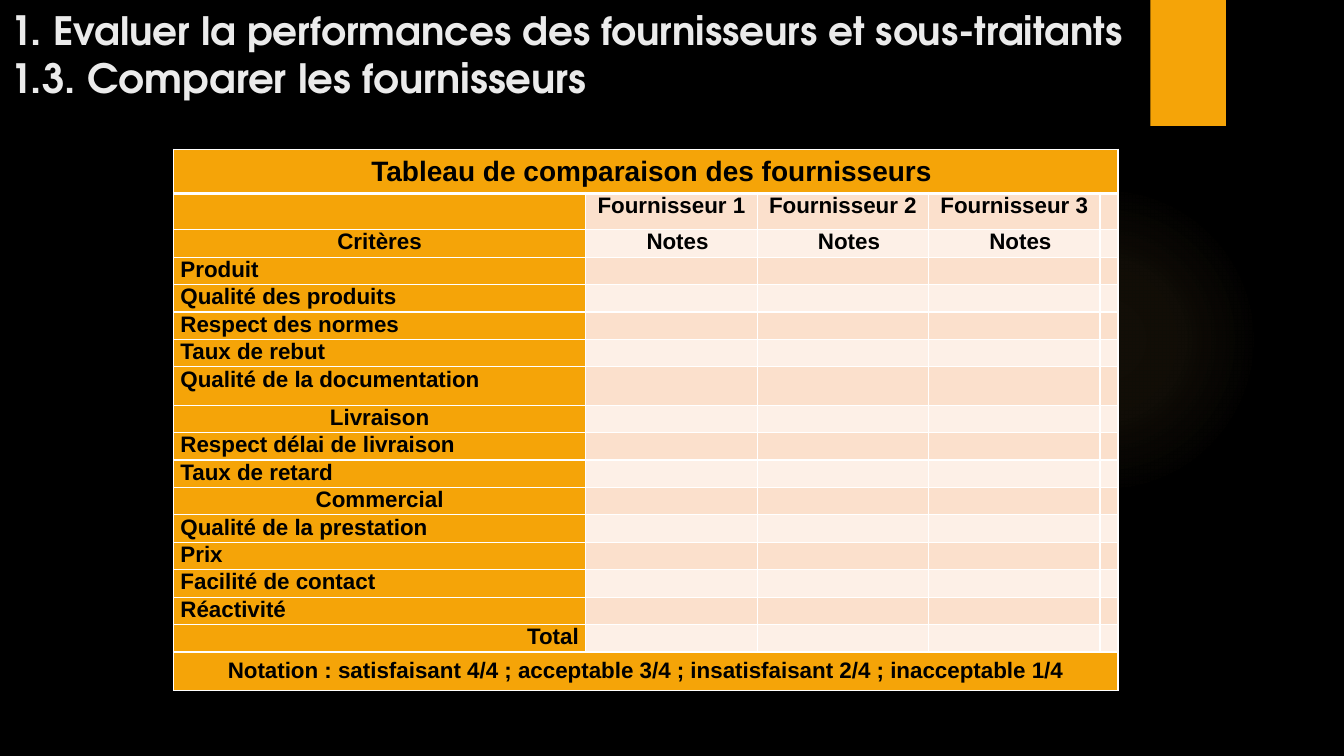
from lxml import etree
from pptx import Presentation
from pptx.dml.color import RGBColor
from pptx.enum.shapes import MSO_SHAPE
from pptx.enum.text import MSO_ANCHOR, MSO_AUTO_SIZE, PP_ALIGN
from pptx.oxml import parse_xml
from pptx.oxml.ns import qn
from pptx.util import Inches, Pt

LEFT, MID, RIGHT = PP_ALIGN.LEFT, PP_ALIGN.CENTER, PP_ALIGN.RIGHT
TOP, CENTER, BOTTOM = MSO_ANCHOR.TOP, MSO_ANCHOR.MIDDLE, MSO_ANCHOR.BOTTOM
NS = "http://schemas.openxmlformats.org/drawingml/2006/main"

TITLE = [
    [("1. ", 28.8), ("Evaluer la performances des fournisseurs et sous-traitants", 27.9)],
    [("1.3. Comparer les fournisseurs", 28.8)],
]
HEAD = "Tableau de comparaison des fournisseurs"
NOTE = "Notation : satisfaisant 4/4 ; acceptable 3/4 ; insatisfaisant 2/4 ; inacceptable 1/4"
ROWS = [
    ("", LEFT, ["Fournisseur 1", "Fournisseur 2", "Fournisseur 3"]),
    ("Critères", MID, ["Notes"] * 3),
    ("Produit", LEFT, []),
    ("Qualité des produits", LEFT, []),
    ("Respect des normes", LEFT, []),
    ("Taux de rebut", LEFT, []),
    ("Qualité de la documentation", LEFT, []),
    ("Livraison", MID, []),
    ("Respect délai de livraison", LEFT, []),
    ("Taux de retard", LEFT, []),
    ("Commercial", MID, []),
    ("Qualité de la prestation", LEFT, []),
    ("Prix", LEFT, []),
    ("Facilité de contact", LEFT, []),
    ("Réactivité", LEFT, []),
    ("Total", RIGHT, []),
]
WIDTHS = [4.09, 1.7, 1.7, 1.7, 0.17]
LAST = len(ROWS) + 1
HIGH = {0: 0.44, 1: 0.36, 7: 0.38, LAST: 0.38}
GOLD, WHITE, BLACK = "F5A408", "FFFFFF", "000000"
BANDS = ["FDF0E7", "FBE0CC"]
GLOW = [(0, 7), (36, 6), (69, 0), (100, 0)]


def color(code):
    return RGBColor.from_string(code)


def shape(kind, x, y, w, h):
    item = slide.shapes.add_shape(kind, Inches(x), Inches(y), Inches(w), Inches(h))
    item.shadow.inherit = False
    item.line.fill.background()
    return item


def border(cell, low):
    props = cell._tc.get_or_add_tcPr()
    for side, width in (("L", 1), ("R", 1), ("T", 1), ("B", low)):
        line = etree.SubElement(props, qn("a:ln" + side), w=str(Pt(width)))
        fill = etree.SubElement(line, qn("a:solidFill"))
        etree.SubElement(fill, qn("a:srgbClr"), val=WHITE)


def put(cell, text, fill, align=LEFT, size=16, indent=0, gap=0, anchor=TOP, low=1):
    cell.margin_left = cell.margin_right = Inches(0.07)
    cell.margin_top = cell.margin_bottom = 0
    cell.vertical_anchor = anchor
    border(cell, low)
    cell.fill.solid()
    cell.fill.fore_color.rgb = color(fill)
    para = cell.text_frame.paragraphs[0]
    para.alignment = align
    if not text:
        etree.SubElement(para._p, qn("a:endParaRPr"), sz=str(size * 100))
        return
    para.text = text
    if indent:
        para._p.get_or_add_pPr().set("marL", str(Inches(indent)))
    para.space_before = para.space_after = Pt(gap)
    font = para.runs[0].font
    font.name, font.size, font.bold = "Arial", Pt(size), True
    font.color.rgb = color(BLACK)


deck = Presentation()
deck.slide_width, deck.slide_height = Inches(13.33), Inches(7.5)
slide = deck.slides.add_slide(deck.slide_layouts[0])
slide.background.fill.solid()
slide.background.fill.fore_color.rgb = color(BLACK)
sub = slide.placeholders[1]._element
sub.getparent().remove(sub)

glow = shape(MSO_SHAPE.OVAL, 9.41, 1.83, 3.08, 3.08)
stops = "".join(
    f'<a:gs pos="{pos * 1000}"><a:srgbClr val="FAC96A">'
    f'<a:alpha val="{alpha * 1000}"/></a:srgbClr></a:gs>'
    for pos, alpha in GLOW
)
glow._element.spPr.find(qn("a:prstGeom")).addnext(parse_xml(
    f'<a:gradFill xmlns:a="{NS}"><a:gsLst>{stops}</a:gsLst><a:path path="circle">'
    '<a:fillToRect l="50000" t="50000" r="50000" b="50000"/></a:path></a:gradFill>'
))

tab = shape(MSO_SHAPE.RECTANGLE, 11.41, 0, 0.75, 1.25)
tab.fill.solid()
tab.fill.fore_color.rgb = color(GOLD)

tall = [HIGH.get(row, 0.24) for row in range(LAST + 1)]
grid = slide.shapes.add_table(
    len(tall), len(WIDTHS), Inches(1.72), Inches(1.48),
    Inches(sum(WIDTHS)), Inches(sum(tall)),
).table
for col, width in zip(grid.columns, WIDTHS):
    col.width = Inches(width)
for row, height in zip(grid.rows, tall):
    row.height = Inches(height)

for row, text, size, indent, low in ((0, HEAD, 20, 0.12, 3), (LAST, NOTE, 16, 0, 1)):
    grid.cell(row, 0).merge(grid.cell(row, len(WIDTHS) - 1))
    put(grid.cell(row, 0), text, GOLD, MID, size, indent, 6, CENTER, low)
    for col in range(1, len(WIDTHS)):
        put(grid.cell(row, col), "", GOLD, low=low)

for row, (label, align, marks) in enumerate(ROWS, 1):
    put(grid.cell(row, 0), label, GOLD, align)
    for col in range(1, len(WIDTHS)):
        text = marks[col - 1] if col <= len(marks) else ""
        indent = 0.12 if text == "Notes" else 0
        put(grid.cell(row, col), text, BANDS[row % 2], MID, indent=indent)

title = slide.shapes.title
title.left, title.top = 0, 0
title.width, title.height = Inches(11.81), Inches(1.06)
frame = title.text_frame
frame.auto_size = MSO_AUTO_SIZE.NONE
frame.word_wrap = True
frame.vertical_anchor = BOTTOM
para = frame.paragraphs[0]
para.alignment = LEFT
for num, line in enumerate(TITLE):
    if num:
        para.add_line_break()
    for text, size in line:
        run = para.add_run()
        run.text = text
        run.font.name, run.font.size, run.font.bold = "TeX Gyre Adventor", Pt(size), True
        run.font.color.rgb = color("EBEBEB")

deck.save("out.pptx")
